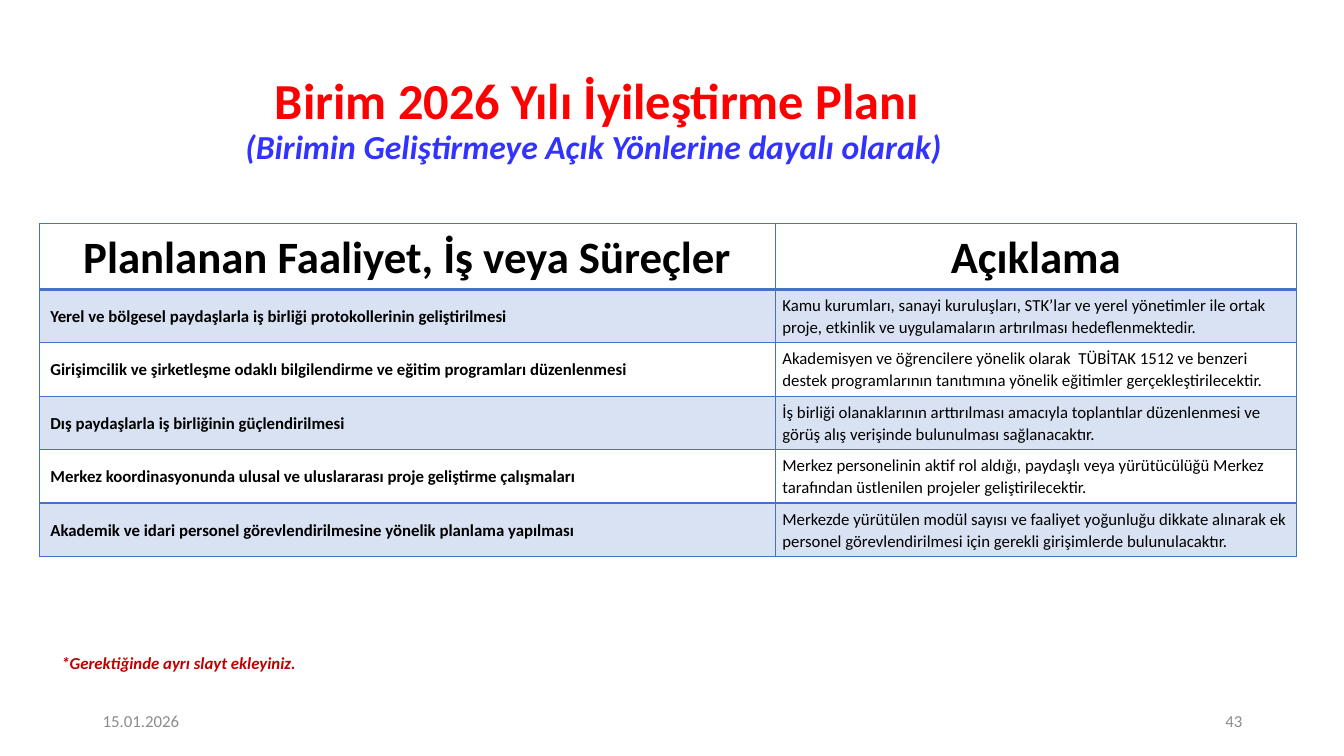
from lxml import etree
from pptx import Presentation
from pptx.dml.color import RGBColor
from pptx.enum.text import MSO_ANCHOR, PP_ALIGN
from pptx.oxml.ns import qn
from pptx.util import Inches, Pt

LEFT, CENTER, RIGHT = PP_ALIGN.LEFT, PP_ALIGN.CENTER, PP_ALIGN.RIGHT
TOP, MIDDLE = MSO_ANCHOR.TOP, MSO_ANCHOR.MIDDLE


class Theme:
    font = "Calibri"
    title_color, subtitle_color = "FF0000", "3333FF"
    text_color, note_color, footer_color = "000000", "C00000", "8C8C8C"
    table_color, band_opacity = "4472C4", 20
    title_size, subtitle_size, header_size, body_size = 36, 24, 32, 12
    thin_line, thick_line = 1, 2


PLAN_HEADER = ("Planlanan Faaliyet, İş veya Süreçler", "Açıklama")
PLAN_ROWS = [
    ("Yerel ve bölgesel paydaşlarla iş birliği protokollerinin geliştirilmesi",
     "Kamu kurumları, sanayi kuruluşları, STK’lar ve yerel yönetimler ile ortak proje, "
     "etkinlik ve uygulamaların artırılması hedeflenmektedir."),
    ("Girişimcilik ve şirketleşme odaklı bilgilendirme ve eğitim programları düzenlenmesi",
     "Akademisyen ve öğrencilere yönelik olarak  TÜBİTAK 1512 ve benzeri destek "
     "programlarının tanıtımına yönelik eğitimler gerçekleştirilecektir."),
    ("Dış paydaşlarla iş birliğinin güçlendirilmesi",
     "İş birliği olanaklarının arttırılması amacıyla toplantılar düzenlenmesi ve görüş "
     "alış verişinde bulunulması sağlanacaktır."),
    ("Merkez koordinasyonunda ulusal ve uluslararası proje geliştirme çalışmaları",
     "Merkez personelinin aktif rol aldığı, paydaşlı veya yürütücülüğü Merkez tarafından "
     "üstlenilen projeler geliştirilecektir."),
    ("Akademik ve idari personel görevlendirilmesine yönelik planlama yapılması",
     "Merkezde yürütülen modül sayısı ve faaliyet yoğunluğu dikkate alınarak ek personel "
     "görevlendirilmesi için gerekli girişimlerde bulunulacaktır."),
]


class SlideBuilder:
    def __init__(self, slide, theme):
        self.slide = slide
        self.theme = theme

    def fill_paragraph(self, paragraph, lines, align=LEFT, spacing=1.0):
        """Put (text, size, color, font formats) lines into one paragraph."""
        paragraph.alignment = align
        paragraph.line_spacing = spacing
        for index, (text, size, color, formats) in enumerate(lines):
            if index:
                paragraph.add_line_break()
            run = paragraph.add_run()
            run.text = text
            values = {"name": self.theme.font, "size": Pt(size), **formats}
            for name, value in values.items():
                setattr(run.font, name, value)
            run.font.color.rgb = RGBColor.from_string(color)

    def text(self, box, lines, align=LEFT, anchor=MIDDLE, spacing=1.0):
        shape = self.slide.shapes.add_textbox(*map(Inches, box))
        shape.text_frame.word_wrap = True
        shape.text_frame.vertical_anchor = anchor
        self.fill_paragraph(shape.text_frame.paragraphs[0], lines, align, spacing)

    def border(self, cell, side, width):
        properties = cell._tc.get_or_add_tcPr()
        line = etree.SubElement(properties, qn(f"a:ln{side}"), w=str(Pt(width)))
        fill = etree.SubElement(line, qn("a:solidFill"))
        etree.SubElement(fill, qn("a:srgbClr"), val=self.theme.table_color)

    def cell(self, cell, row, column, text):
        theme = self.theme
        header = row == 0
        # Activity names sit slightly further in than the explanations
        indent = 0.11 if column == 0 and not header else 0.07
        formats = {
            "margin_left": Inches(indent), "margin_right": Inches(0.07),
            "margin_top": 0, "margin_bottom": 0, "vertical_anchor": MIDDLE,
        }
        for name, value in formats.items():
            setattr(cell, name, value)
        size = theme.header_size if header else theme.body_size
        bold = header or column == 0
        self.fill_paragraph(cell.text_frame.paragraphs[0],
                            [(text, size, theme.text_color, {"bold": bold})],
                            CENTER if header else LEFT, 1.07)

        # Borders, with a heavier rule below the header
        thick_side = {0: "B", 1: "T"}.get(row)
        for side in "LRTB":
            self.border(cell, side, theme.thick_line if side == thick_side else theme.thin_line)

        # Translucent band on every other row
        if row % 2:
            cell.fill.solid()
            cell.fill.fore_color.rgb = RGBColor.from_string(theme.table_color)
            color = cell._tc.tcPr.find(qn("a:solidFill")).find(qn("a:srgbClr"))
            etree.SubElement(color, qn("a:alpha"), val=str(theme.band_opacity * 1000))
        else:
            cell.fill.background()

    def table(self, box, rows, widths, heights):
        frame = self.slide.shapes.add_table(len(rows), len(widths), *map(Inches, box))
        table = frame.table
        table.first_row = table.horz_banding = False
        for column, width in zip(table.columns, widths):
            column.width = Inches(width)
        for row, height in zip(table.rows, heights):
            row.height = Inches(height)
        for row, texts in enumerate(rows):
            for column, text in enumerate(texts):
                self.cell(table.cell(row, column), row, column, text)


def main():
    presentation = Presentation()
    presentation.slide_width = Inches(13.33)
    presentation.slide_height = Inches(7.5)
    theme = Theme()
    builder = SlideBuilder(presentation.slides.add_slide(presentation.slide_layouts[6]), theme)

    # Title and subtitle
    builder.text((0.3, 0.78, 11.25, 0.84), [
        ("Birim 2026 Yılı İyileştirme Planı", theme.title_size, theme.title_color,
         {"bold": True}),
        ("(Birimin Geliştirmeye Açık Yönlerine dayalı olarak) ", theme.subtitle_size,
         theme.subtitle_color, {"bold": True, "italic": True}),
    ], CENTER, spacing=0.9)

    # Improvement plan
    builder.table((0.39, 2.22, 12.47, 3.3), [PLAN_HEADER, *PLAN_ROWS],
                  (7.3, 5.17), [0.65] + [0.53] * len(PLAN_ROWS))

    # Note
    builder.text((0.51, 6.43, 5, 0.3), [
        ("*Gerektiğinde ayrı slayt ekleyiniz.", theme.body_size, theme.note_color,
         {"bold": True, "italic": True}),
    ], anchor=TOP)

    # Date and slide number
    for left, text, align in ((0.92, "15.01.2026", LEFT), (9.42, "43", RIGHT)):
        builder.text((left, 6.95, 3, 0.4),
                     [(text, theme.body_size, theme.footer_color, {})], align)

    presentation.save("out.pptx")


if __name__ == "__main__":
    main()
